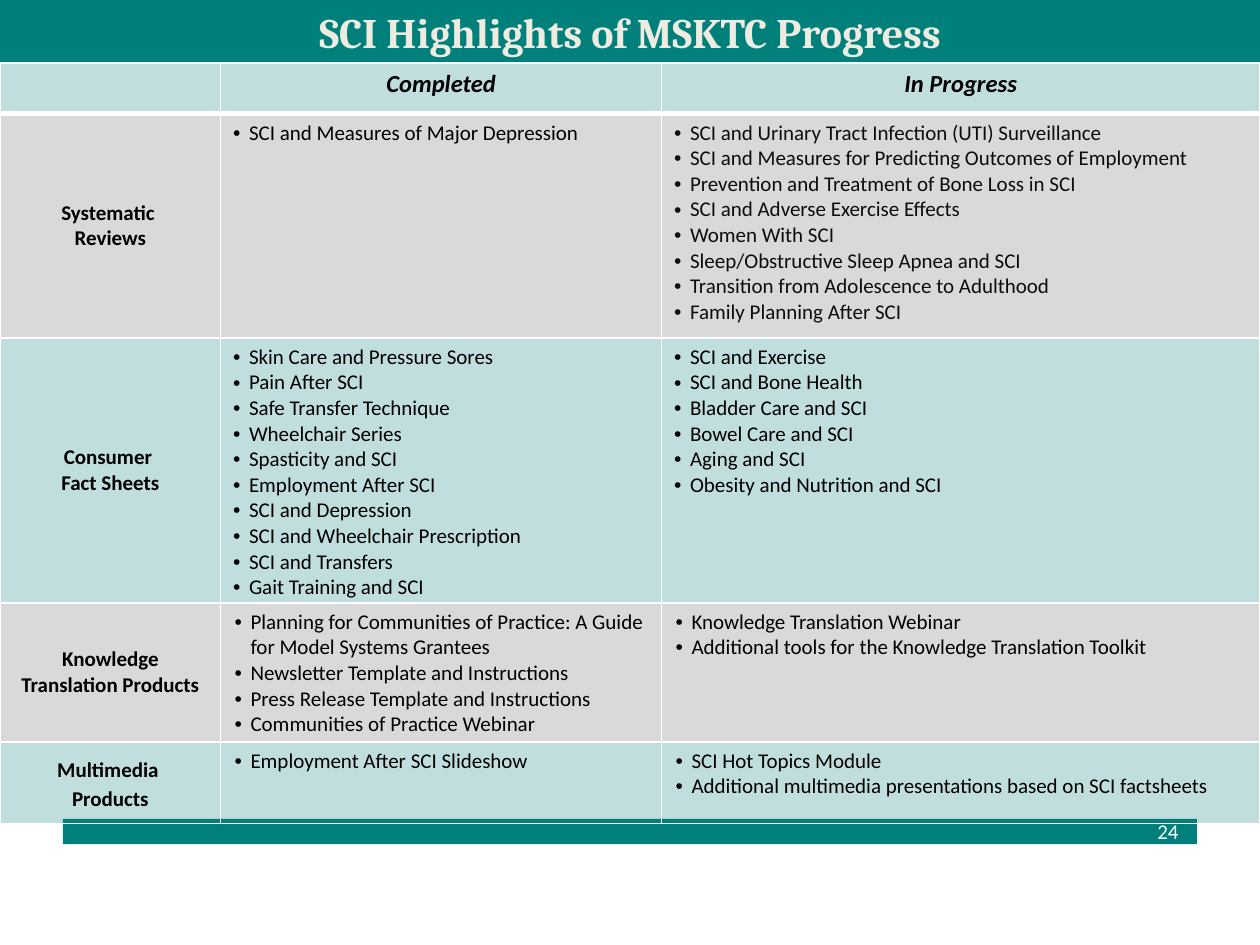
from copy import deepcopy

from lxml import etree
from pptx import Presentation
from pptx import util as u
from pptx.dml.color import RGBColor
from pptx.enum import shapes, text
from pptx.oxml import ns

TEAL, GREY, WHITE, BLACK = "007F7B", "D9D9D9", "FFFFFF", "000000"
LEFT, CENTER = text.PP_ALIGN.LEFT, text.PP_ALIGN.CENTER
TOP, MIDDLE = text.MSO_ANCHOR.TOP, text.MSO_ANCHOR.MIDDLE


def paint(fill, color, opacity=None):
    fill.solid()
    fill.fore_color.rgb = RGBColor.from_string(color)
    if opacity:
        srgb = fill._xPr.find(".//" + ns.qn("a:srgbClr"))
        etree.SubElement(srgb, ns.qn("a:alpha"), val=str(opacity * 1000))


def write(frame, lines, size=12, color=BLACK, font="Calibri", bold=False,
          italic=False, align=LEFT, bullet=False, after=0, spacing=None):
    """Write one paragraph per line; a newline inside a line is a soft break."""
    frame.word_wrap = True
    for index, line in enumerate(lines):
        para = frame.add_paragraph() if index else frame.paragraphs[0]
        para.alignment, para.space_after = align, u.Pt(after)
        if spacing:
            para.line_spacing = spacing
        if bullet:
            props = para._p.get_or_add_pPr()
            indent = u.Cm(0.32)
            props.set("marL", str(indent))
            props.set("indent", str(-indent))
            etree.SubElement(props, ns.qn("a:buFont"), typeface="Arial")
            etree.SubElement(props, ns.qn("a:buChar"), char="•")
        for part_index, part in enumerate(line.split("\n")):
            if part_index:
                para.add_line_break()
            run = para.add_run()
            run.text = part
            run.font.size, run.font.name = u.Pt(size), font
            run.font.bold, run.font.italic = bold, italic
            run.font.color.rgb = RGBColor.from_string(color)
        # Soft breaks take the size of the text around them
        for line_break in para._p.findall(ns.qn("a:br")):
            line_break.append(deepcopy(para.runs[0]._r.rPr))


class SlideBuilder:
    def __init__(self, deck):
        self.slide = deck.slides.add_slide(deck.slide_layouts[5])

    def title(self, line, left, top, width, height):
        title = self.slide.shapes.title
        title.left, title.top = u.Cm(left), u.Cm(top)
        title.width, title.height = u.Cm(width), u.Cm(height)
        paint(title.fill, TEAL)
        title.text_frame.auto_size = text.MSO_AUTO_SIZE.NONE
        title.text_frame.vertical_anchor = MIDDLE
        write(title.text_frame, [line], size=24, color="EEECE1",
              font="Cambria", bold=True, align=CENTER)

    def bar(self, left, top, width, height):
        bar = self.slide.shapes.add_shape(
            shapes.MSO_SHAPE.RECTANGLE, *map(u.Cm, (left, top, width, height)))
        bar.shadow.inherit = False
        paint(bar.fill, TEAL)
        bar.line.fill.background()

    def label(self, line, left, top, width, height, **style):
        box = self.slide.shapes.add_textbox(*map(u.Cm, (left, top, width, height)))
        write(box.text_frame, [line], **style)

    def table(self, left, top, widths, heights):
        frame = self.slide.shapes.add_table(
            len(heights), len(widths), u.Cm(left), u.Cm(top),
            u.Cm(sum(widths)), u.Cm(sum(heights)))
        table = frame.table
        table.first_row = table.horz_banding = False
        for column, width in zip(table.columns, widths):
            column.width = u.Cm(width)
        for row, height in zip(table.rows, heights):
            row.height = u.Cm(height)
        return table

    def cell(self, cell, lines, fill, opacity=None, anchor=TOP, side=0.25,
             bottom=1, above=1, **style):
        cell.margin_left = cell.margin_right = u.Cm(side)
        cell.margin_top = cell.margin_bottom = u.Cm(0.13)
        cell.vertical_anchor = anchor
        paint(cell.fill, fill, opacity)
        write(cell.text_frame, lines, **style)
        props = cell._tc.get_or_add_tcPr()
        borders = (("L", 1), ("R", 1), ("T", above), ("B", bottom))
        for index, (edge, width) in enumerate(borders):
            line = etree.Element(ns.qn("a:ln" + edge), w=str(u.Pt(width)))
            solid = etree.SubElement(line, ns.qn("a:solidFill"))
            etree.SubElement(solid, ns.qn("a:srgbClr"), val=WHITE)
            props.insert(index, line)


HEADINGS = ["", "Completed", "In Progress"]
# Category, completed items, items in progress
PROGRESS = [
    ("Systematic \nReviews",
     ["SCI and Measures of Major Depression"],
     ["SCI and Urinary Tract Infection (UTI) Surveillance",
      "SCI and Measures for Predicting Outcomes of Employment",
      "Prevention and Treatment of Bone Loss in SCI",
      "SCI and Adverse Exercise Effects",
      "Women With SCI",
      "Sleep/Obstructive Sleep Apnea and SCI",
      "Transition from Adolescence to Adulthood",
      "Family Planning After SCI"]),
    ("Consumer \nFact Sheets",
     ["Skin Care and Pressure Sores",
      "Pain After SCI",
      "Safe Transfer Technique",
      "Wheelchair Series",
      "Spasticity and SCI",
      "Employment After SCI",
      "SCI and Depression",
      "SCI and Wheelchair Prescription",
      "SCI and Transfers",
      "Gait Training and SCI"],
     ["SCI and Exercise",
      "SCI and Bone Health",
      "Bladder Care and SCI",
      "Bowel Care and SCI",
      "Aging and SCI",
      "Obesity and Nutrition and SCI"]),
    ("Knowledge Translation Products",
     ["Planning for Communities of Practice: A Guide for Model Systems Grantees",
      "Newsletter Template and Instructions",
      "Press Release Template and Instructions",
      "Communities of Practice Webinar"],
     ["Knowledge Translation Webinar",
      "Additional tools for the Knowledge Translation Toolkit"]),
    ("Multimedia \nProducts",
     ["Employment After SCI Slideshow"],
     ["SCI Hot Topics Module",
      "Additional multimedia presentations based on SCI factsheets"]),
]


def main():
    deck = Presentation()
    deck.slide_width, deck.slide_height = u.Cm(25.4), u.Cm(19.05)
    builder = SlideBuilder(deck)

    # Footer bar and page number
    builder.bar(1.27, 16.51, 22.86, 0.51)
    builder.label("24", 23.08, 16.38, 1.07, 0.76, color=WHITE)

    # Title band
    builder.title("SCI Highlights of MSKTC Progress", 0, 0, 25.4, 1.27)

    # Progress table: header row, then alternating grey and teal rows
    progress = builder.table(0, 1.27, [4.45, 8.89, 12.06],
                             [0.96, 4.52, 5.31, 2.79, 1.65])
    for column, heading in enumerate(HEADINGS):
        builder.cell(progress.cell(0, column), [heading], TEAL, 25, bottom=3,
                     size=14, bold=True, italic=True, align=CENTER)
    for row, (category, *item_lists) in enumerate(PROGRESS, start=1):
        fill, opacity = (GREY, None) if row % 2 else (TEAL, 25)
        look = dict(fill=fill, opacity=opacity, above=3 if row == 1 else 1)
        builder.cell(progress.cell(row, 0), [category], anchor=MIDDLE,
                     bold=True, align=CENTER, after=6,
                     spacing=1.15 if row == len(PROGRESS) else None, **look)
        for column, items in enumerate(item_lists, start=1):
            color = "0D0D0D" if (row, column) == (1, 2) else BLACK
            builder.cell(progress.cell(row, column), items, bullet=True,
                         side=0.28 if row > 2 else 0.25, color=color, **look)

    deck.save("out.pptx")


if __name__ == "__main__":
    main()
